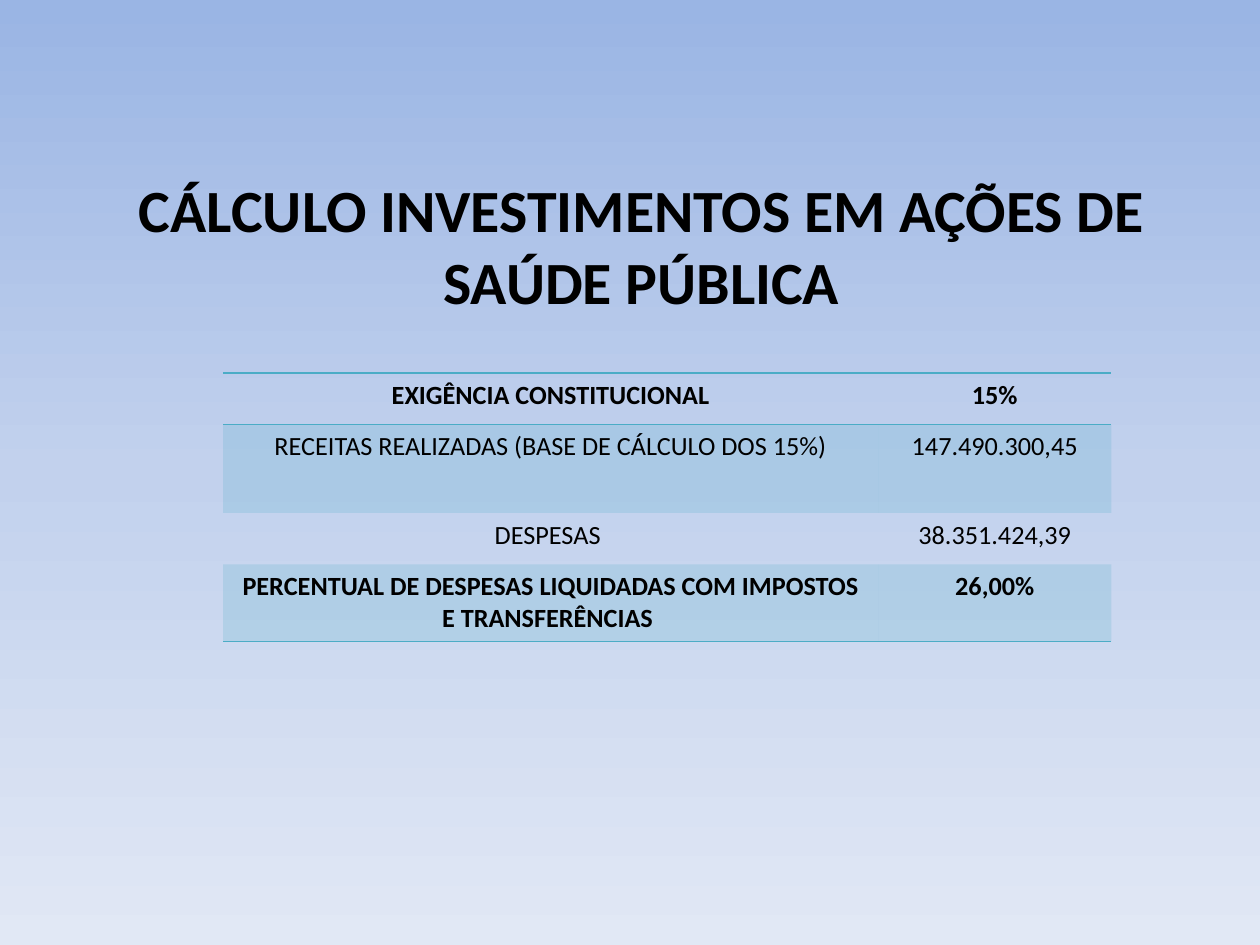
from copy import deepcopy
from dataclasses import dataclass

from lxml import etree
from pptx import Presentation, util as u
from pptx.dml.color import RGBColor
from pptx.enum import text
from pptx.oxml.ns import qn


@dataclass(frozen=True)
class Theme:
    font: str = "Calibri"
    ink: str = "000000"
    accent: str = "4BACC6"
    band_alpha: int = 20
    background: tuple = ("9AB5E4", "C2D1ED", "E1E8F5")
    title_size: float = 34.2
    table_size: float = 15
    rule_width: float = 1


@dataclass(frozen=True)
class Row:
    label: str
    value: str
    height: float
    bold: bool = False
    banded: bool = False
    rules: tuple = ()


THEME = Theme()
COLUMNS = (5.2, 1.85)
ROWS = (
    Row("EXIGÊNCIA CONSTITUCIONAL", "15%", 0.41, bold=True, rules=("a:lnT", "a:lnB")),
    Row("RECEITAS REALIZADAS (BASE DE CÁLCULO DOS 15%)", "147.490.300,45", 0.7, banded=True),
    Row("DESPESAS ", "38.351.424,39", 0.41),
    Row("PERCENTUAL DE DESPESAS LIQUIDADAS COM IMPOSTOS E TRANSFERÊNCIAS ", "26,00%", 0.61,
        bold=True, banded=True, rules=("a:lnB",)),
)
PLAIN_TABLE_STYLE = "{2D5ABB26-0587-4C30-8999-92F81FD0307C}"


def write(tf, content: str, *, size: float, bold: bool = False) -> None:
    p = tf.paragraphs[0]
    p.alignment = text.PP_ALIGN.CENTER
    r = p.add_run()
    r.text = content
    r.font.name = THEME.font
    r.font.size = u.Pt(size)
    r.font.bold = bold
    r.font.color.rgb = RGBColor.from_string(THEME.ink)


def paint_background(s) -> None:
    fill = s.background.fill
    fill.gradient()
    fill.gradient_angle = 270
    first = next(s.element.iter(qn("a:gs")))
    first.addnext(deepcopy(first))
    last = len(THEME.background) - 1
    for i, (stop, color) in enumerate(zip(fill.gradient_stops, THEME.background)):
        stop.position = i / last
        stop.color.rgb = RGBColor.from_string(color)


def add_rule(cell, side: str) -> None:
    """Draw one cell border; side is the border's tag, such as a:lnB."""
    ln = etree.SubElement(cell._tc.get_or_add_tcPr(), qn(side), w=str(u.Pt(THEME.rule_width)))
    solid = etree.SubElement(ln, qn("a:solidFill"))
    etree.SubElement(solid, qn("a:srgbClr"), val=THEME.accent)


def fill_cell(cell, content: str, row: Row) -> None:
    write(cell.text_frame, content, size=THEME.table_size, bold=row.bold)
    for side in row.rules:
        add_rule(cell, side)
    if row.banded:
        cell.fill.solid()
        cell.fill.fore_color.rgb = RGBColor.from_string(THEME.accent)
        color = cell._tc.tcPr.find(qn("a:solidFill")).find(qn("a:srgbClr"))
        etree.SubElement(color, qn("a:alpha"), val=str(THEME.band_alpha * 1000))
    else:
        cell.fill.background()


def add_title(s, content: str) -> None:
    sp = s.shapes.title
    sp.left, sp.top, sp.width, sp.height = map(u.Inches, (0.59, 0.76, 9, 1.65))
    tf = sp.text_frame
    tf.word_wrap = True
    tf.auto_size = text.MSO_AUTO_SIZE.NONE
    tf.vertical_anchor = text.MSO_ANCHOR.TOP
    tf.margin_top, tf.margin_bottom = u.Inches(0.61), 0
    write(tf, content, size=THEME.title_size, bold=True)


def add_health_table(s) -> None:
    frame = s.shapes.add_table(
        len(ROWS), len(COLUMNS), u.Inches(1.77), u.Inches(2.96),
        u.Inches(sum(COLUMNS)), u.Inches(sum(row.height for row in ROWS)))
    table = frame.table
    table.first_row = table.horz_banding = False
    next(frame.element.iter(qn("a:tableStyleId"))).text = PLAIN_TABLE_STYLE
    for column, width in zip(table.columns, COLUMNS):
        column.width = u.Inches(width)
    for line, row in zip(table.rows, ROWS):
        line.height = u.Inches(row.height)
        for cell, content in zip(line.cells, (row.label, row.value)):
            fill_cell(cell, content, row)


def main() -> None:
    prs = Presentation()
    prs.slide_width, prs.slide_height = u.Inches(10), u.Inches(7.5)
    s = prs.slides.add_slide(prs.slide_layouts[5])
    paint_background(s)
    add_title(s, "CÁLCULO INVESTIMENTOS EM AÇÕES DE SAÚDE PÚBLICA")
    add_health_table(s)
    prs.save("out.pptx")


if __name__ == "__main__":
    main()
